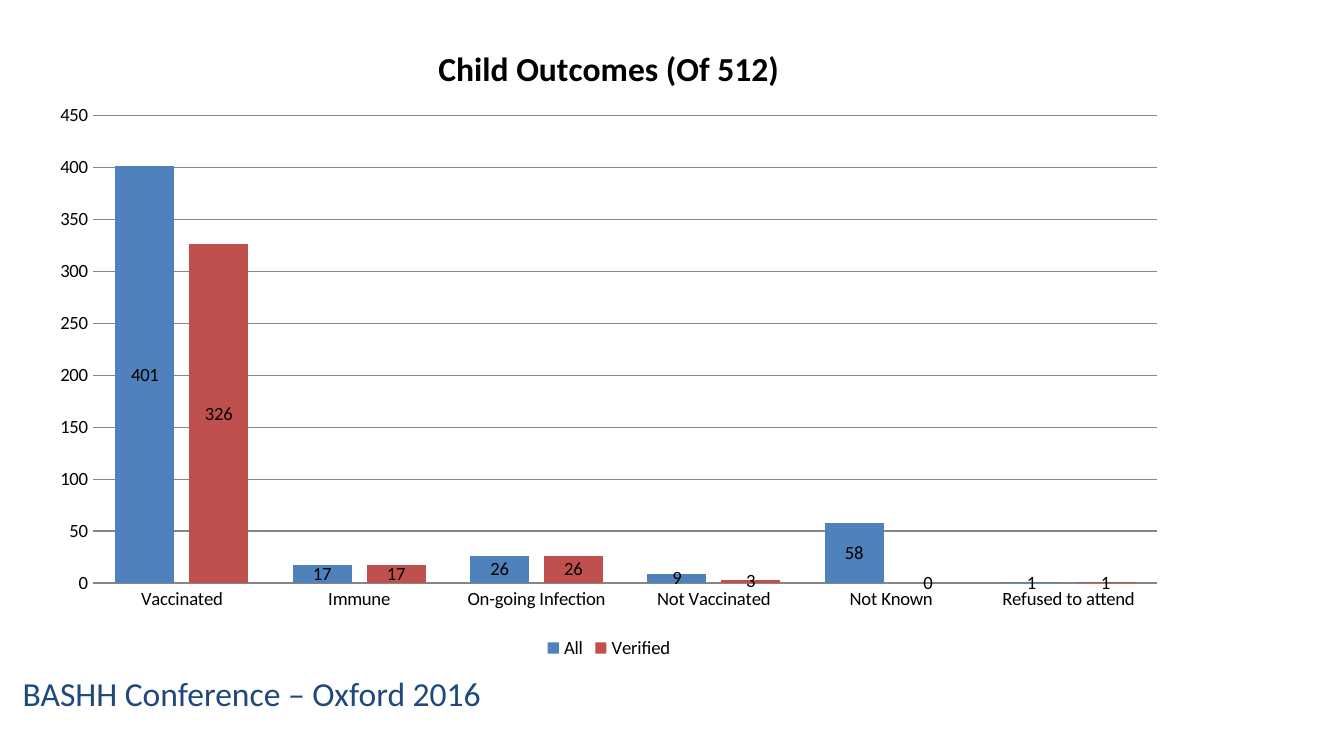
"""Build the slide of child outcomes with a clustered column chart."""
import dataclasses
import typing

import lxml.etree
import pptx
import pptx.chart.data
import pptx.dml.color
import pptx.enum.chart
import pptx.enum.text
import pptx.oxml.ns
import pptx.util

RGB = pptx.dml.color.RGBColor
BLACK = RGB(0x00, 0x00, 0x00)
NAVY = RGB(0x1F, 0x49, 0x7D)
BLUE = RGB(0x4F, 0x81, 0xBD)
RED = RGB(0xC0, 0x50, 0x4D)
GREY = RGB(0x86, 0x86, 0x86)
FACE = "Calibri"
WIDE = pptx.util.Inches(10)
HIGH = WIDE * 9 // 16
GROUPS = ("Vaccinated", "Immune", "On-going Infection",
          "Not Vaccinated", "Not Known", "Refused to attend")


@dataclasses.dataclass(frozen=True)
class Area:
    """A box in percent of the width and height around it."""
    left: float
    top: float
    width: float
    height: float

    def place(self) -> tuple[int, int, int, int]:
        """Return the box as lengths on the slide."""
        return (int(self.left * WIDE / 100), int(self.top * HIGH / 100),
                int(self.width * WIDE / 100), int(self.height * HIGH / 100))


@dataclasses.dataclass(frozen=True)
class Series:
    """One set of columns."""
    name: str
    values: tuple[int, ...]
    color: RGB


SERIES = (
    Series("All", (401, 17, 26, 9, 58, 1), BLUE),
    Series("Verified", (326, 17, 26, 3, 0, 1), RED),
)


def apply(thing: typing.Any, format: dict[str, typing.Any]) -> None:
    """Set each named attribute of the thing."""
    for name, value in format.items():
        setattr(thing, name, value)


def style(font: typing.Any, size: float, color: RGB, bold: bool = False) -> None:
    """Give a font its face, size, weight and color."""
    apply(font, {"name": FACE, "size": pptx.util.Pt(size), "bold": bold})
    font.fill.solid()
    font.fill.fore_color.rgb = color


def rule(line: typing.Any) -> None:
    """Make a thin grey line."""
    line.color.rgb = GREY
    line.width = pptx.util.Pt(0.75)


def fix_plot(chart: typing.Any, area: Area) -> None:
    """Place the inner plot area in percent of the chart."""
    qn = pptx.oxml.ns.qn
    plot = chart.plots[0]._element.getparent()
    for old in plot.findall(qn("c:layout")):
        plot.remove(old)
    layout = lxml.etree.Element(qn("c:layout"))
    plot.insert(0, layout)
    manual = lxml.etree.SubElement(layout, qn("c:manualLayout"))
    parts = {"layoutTarget": "inner", "xMode": "edge", "yMode": "edge",
             "x": area.left / 100, "y": area.top / 100,
             "w": area.width / 100, "h": area.height / 100}
    for name, value in parts.items():
        lxml.etree.SubElement(manual, qn(f"c:{name}")).set("val", str(value))


def draw_chart(slide: typing.Any, area: Area) -> None:
    """Add the column chart."""
    data = pptx.chart.data.CategoryChartData(number_format="0")
    data.categories = GROUPS
    for item in SERIES:
        data.add_series(item.name, item.values)
    kind = pptx.enum.chart.XL_CHART_TYPE.COLUMN_CLUSTERED
    chart = slide.shapes.add_chart(kind, *area.place(), data).chart
    style(chart.font, 10, BLACK)

    chart.has_title = True
    title = chart.chart_title.text_frame
    title.text = "Child Outcomes (Of 512)"
    style(title.paragraphs[0].runs[0].font, 18, BLACK, True)
    chart.chart_title.include_in_layout = False

    chart.has_legend = True
    apply(chart.legend, {
        "position": pptx.enum.chart.XL_LEGEND_POSITION.BOTTOM,
        "include_in_layout": False})

    none = pptx.enum.chart.XL_TICK_MARK.NONE
    ticks = {"major_tick_mark": none, "minor_tick_mark": none}
    apply(chart.category_axis, ticks)
    rule(chart.category_axis.format.line)
    scale = chart.value_axis
    apply(scale, ticks | {"minimum_scale": 0, "maximum_scale": 450,
                          "major_unit": 50, "has_major_gridlines": True})
    scale.format.line.fill.background()
    rule(scale.major_gridlines.format.line)

    plot = chart.plots[0]
    apply(plot, {"gap_width": 75, "overlap": -25, "vary_by_categories": False})
    for bars, item in zip(plot.series, SERIES):
        bars.format.fill.solid()
        bars.format.fill.fore_color.rgb = item.color
        apply(bars.data_labels, {
            "show_value": True,
            "position": pptx.enum.chart.XL_LABEL_POSITION.CENTER})
    fix_plot(chart, Area(4.87, 15, 93.13, 72.5))


def draw_foot(slide: typing.Any, area: Area, text: str) -> None:
    """Add the line at the foot of the slide."""
    frame = slide.shapes.add_textbox(*area.place()).text_frame
    apply(frame, {"word_wrap": True, "text": text,
                  "vertical_anchor": pptx.enum.text.MSO_ANCHOR.TOP})
    style(frame.paragraphs[0].runs[0].font, 18, NAVY)


def main() -> None:
    """Build and save the deck."""
    deck = pptx.Presentation()
    apply(deck, {"slide_width": WIDE, "slide_height": HIGH})
    slide = deck.slides.add_slide(deck.slide_layouts.get_by_name("Blank"))
    draw_foot(slide, Area(0.7, 88.18, 47.8, 12.27), "BASHH Conference – Oxford 2016")
    draw_chart(slide, Area(2.8, 2.49, 85, 85.33))
    deck.save("out.pptx")


if __name__ == "__main__":
    main()
